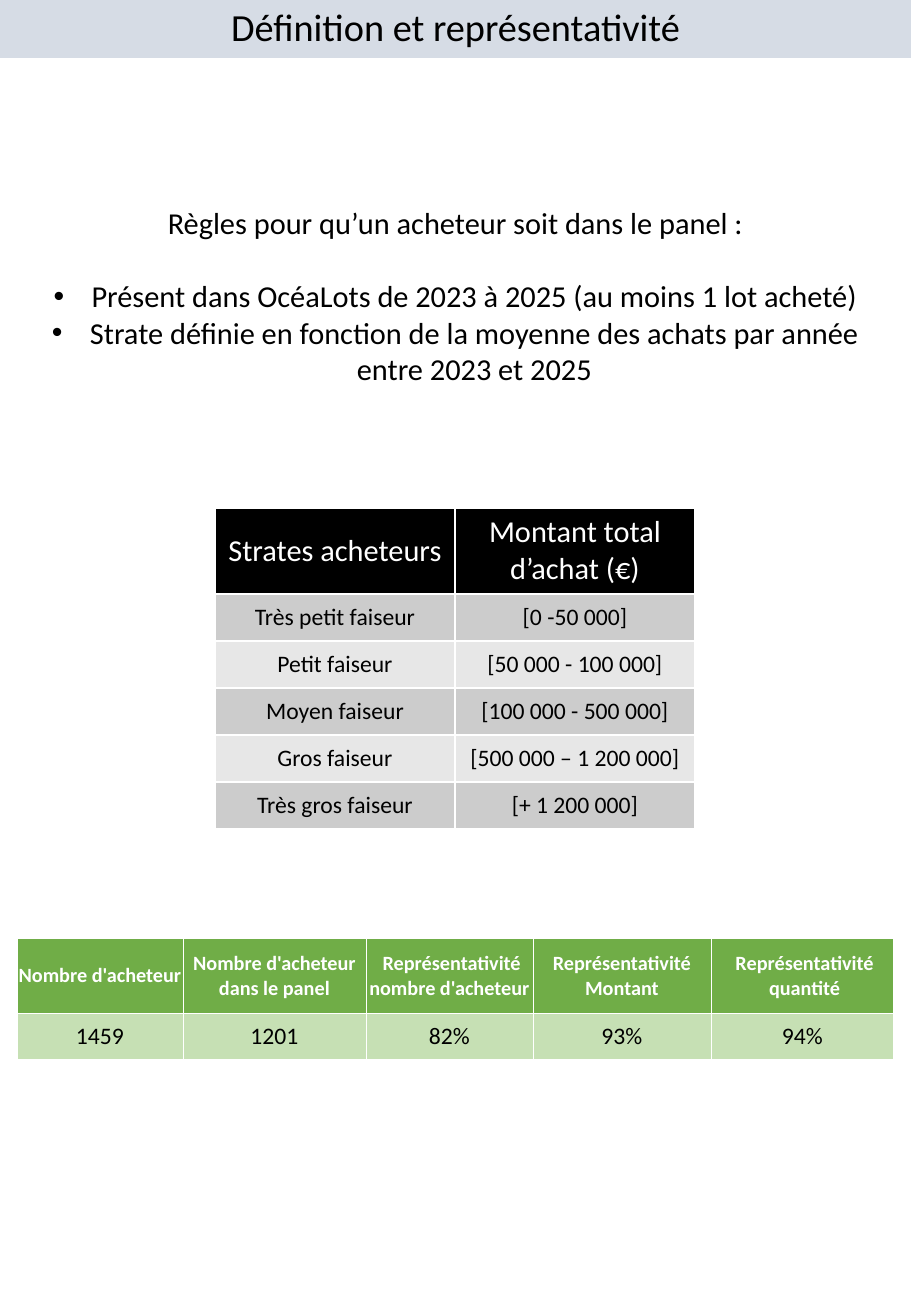
from lxml import etree
from pptx import Presentation
from pptx.dml.color import RGBColor
from pptx.enum.shapes import MSO_SHAPE
from pptx.enum.text import MSO_ANCHOR, PP_ALIGN
from pptx.oxml.ns import qn
from pptx.util import Emu, Pt

RECTANGLE = MSO_SHAPE.RECTANGLE
MIDDLE, TOP = MSO_ANCHOR.MIDDLE, MSO_ANCHOR.TOP
CENTER = PP_ALIGN.CENTER

WHITE = RGBColor(0xFF, 0xFF, 0xFF)
BLACK = RGBColor(0x00, 0x00, 0x00)
BANNER_BLUE = RGBColor(0xD6, 0xDC, 0xE5)
DARK_BAND = RGBColor(0xCC, 0xCC, 0xCC)
LIGHT_BAND = RGBColor(0xE7, 0xE7, 0xE7)
GREEN = RGBColor(0x70, 0xAD, 0x47)
PALE_GREEN = RGBColor(0xC6, 0xE0, 0xB4)

SCALE = 7526
SIDES = ("left", "top", "right", "bottom")


def px(length):
    """Turn pixels into EMU."""
    return Emu(length * SCALE)


class Sheet:
    """Hold the style and the current slide."""

    font_name = "Calibri"

    def __init__(self, width, height):
        """Open a presentation with one blank slide."""
        self.deck = Presentation()
        self.deck.slide_width, self.deck.slide_height = px(width), px(height)
        self.slide = self.deck.slides.add_slide(self.deck.slide_layouts[6])

    def style(self, paragraph, size, color, bold=False):
        """Centre a paragraph and format its runs."""
        paragraph.alignment = CENTER
        formats = {"name": self.font_name, "size": Pt(size), "bold": bold}
        for run in paragraph.runs:
            for key, value in formats.items():
                setattr(run.font, key, value)
            run.font.color.rgb = color

    def band(self, left, top, width, height, fill):
        """Draw a plain filled rectangle."""
        band = self.slide.shapes.add_shape(RECTANGLE, *map(px, (left, top, width, height)))
        band.shadow.inherit = False
        band.fill.solid()
        band.fill.fore_color.rgb = fill
        band.line.fill.background()

    def text(self, box, lines, size, margins, anchor=TOP, bullet_gap=0):
        """Write a heading line, followed by bulleted lines."""
        frame = self.slide.shapes.add_textbox(*map(px, box)).text_frame
        frame.word_wrap = True
        frame.vertical_anchor = anchor
        for side, margin in zip(SIDES, margins):
            setattr(frame, f"margin_{side}", px(margin))
        frame.text = "\n".join(lines)
        for index, paragraph in enumerate(frame.paragraphs):
            if index:
                self.bullet(paragraph)
            if index == 1:
                paragraph.space_before = Pt(bullet_gap)
            self.style(paragraph, size, BLACK)

    def bullet(self, paragraph):
        """Give a paragraph a round bullet."""
        properties = paragraph._p.get_or_add_pPr()
        properties.set("marL", "285750")
        properties.set("indent", "-285750")
        etree.SubElement(properties, qn("a:buFont"), typeface="Arial")
        etree.SubElement(properties, qn("a:buChar"), char="•")

    def border(self, cell, points):
        """Draw white lines on the four sides of a cell."""
        properties = cell._tc.get_or_add_tcPr()
        for index, tag in enumerate(("a:lnL", "a:lnR", "a:lnT", "a:lnB")):
            line = etree.Element(qn(tag), w=str(Pt(points)))
            fill = etree.SubElement(line, qn("a:solidFill"))
            etree.SubElement(fill, qn("a:srgbClr"), val=str(WHITE))
            properties.insert(index, line)

    def table(self, left, top, widths, heights, rows, header, bands, border, margins):
        """Build a table with a header row and alternating body fills."""
        box = map(px, (left, top, sum(widths), sum(heights)))
        table = self.slide.shapes.add_table(len(rows), len(widths), *box).table
        table.first_row = table.horz_banding = False
        for column, width in zip(table.columns, widths):
            column.width = px(width)
        for row, height in zip(table.rows, heights):
            row.height = px(height)
        for r, values in enumerate(rows):
            look = header if r == 0 else {"size": 14, "color": BLACK}
            fill = bands[0] if r == 0 else bands[1 + (r - 1) % (len(bands) - 1)]
            for c, value in enumerate(values):
                cell = table.cell(r, c)
                cell.text = value
                cell.vertical_anchor = MIDDLE
                for side, margin in zip(SIDES, margins):
                    setattr(cell, f"margin_{side}", px(margin))
                cell.fill.solid()
                cell.fill.fore_color.rgb = fill
                self.border(cell, border)
                self.style(cell.text_frame.paragraphs[0], **look)


def main():
    """Compose the slide and save it."""
    sheet = Sheet(911, 1316)
    sheet.band(0, 0, 911, 58, BANNER_BLUE)
    sheet.text((0, 0, 911, 53), ["Définition et représentativité"], 22.7,
               (11, 0, 11, 0), MIDDLE)
    panel_rules = [
        "Règles pour qu’un acheteur soit dans le panel :",
        "Présent dans OcéaLots de 2023 à 2025 (au moins 1 lot acheté)",
        "Strate définie en fonction de la moyenne des achats par année entre 2023 et 2025",
    ]
    sheet.text((35, 198, 841, 233), panel_rules, 18, (11, 6, 11, 6), bullet_gap=22)
    strata = [
        ("Strates acheteurs", "Montant total d’achat (€)"),
        ("Très petit faiseur", "[0 -50 000]"),
        ("Petit faiseur", "[50 000 - 100 000]"),
        ("Moyen faiseur", "[100 000 - 500 000]"),
        ("Gros faiseur", "[500 000 – 1 200 000]"),
        ("Très gros faiseur", "[+ 1 200 000]"),
    ]
    sheet.table(215, 508, [240] * 2, [86] + [47] * 5, strata,
                {"size": 18, "color": WHITE}, (BLACK, DARK_BAND, LIGHT_BAND),
                1, (11, 6, 11, 6))
    coverage = [
        ("Nombre d'acheteur", "Nombre d'acheteur dans le panel",
         " Représentativité nombre d'acheteur", "Représentativité Montant",
         " Représentativité\v quantité"),
        ("1459", "1201", "82%", "93%", "94%"),
    ]
    sheet.table(17, 938, [166, 183, 167, 178, 183], [75, 46], coverage,
                {"size": 12, "color": WHITE, "bold": True}, (GREEN, PALE_GREEN),
                0.5, (1, 1, 1, 0))
    sheet.deck.save("out.pptx")


if __name__ == "__main__":
    main()
